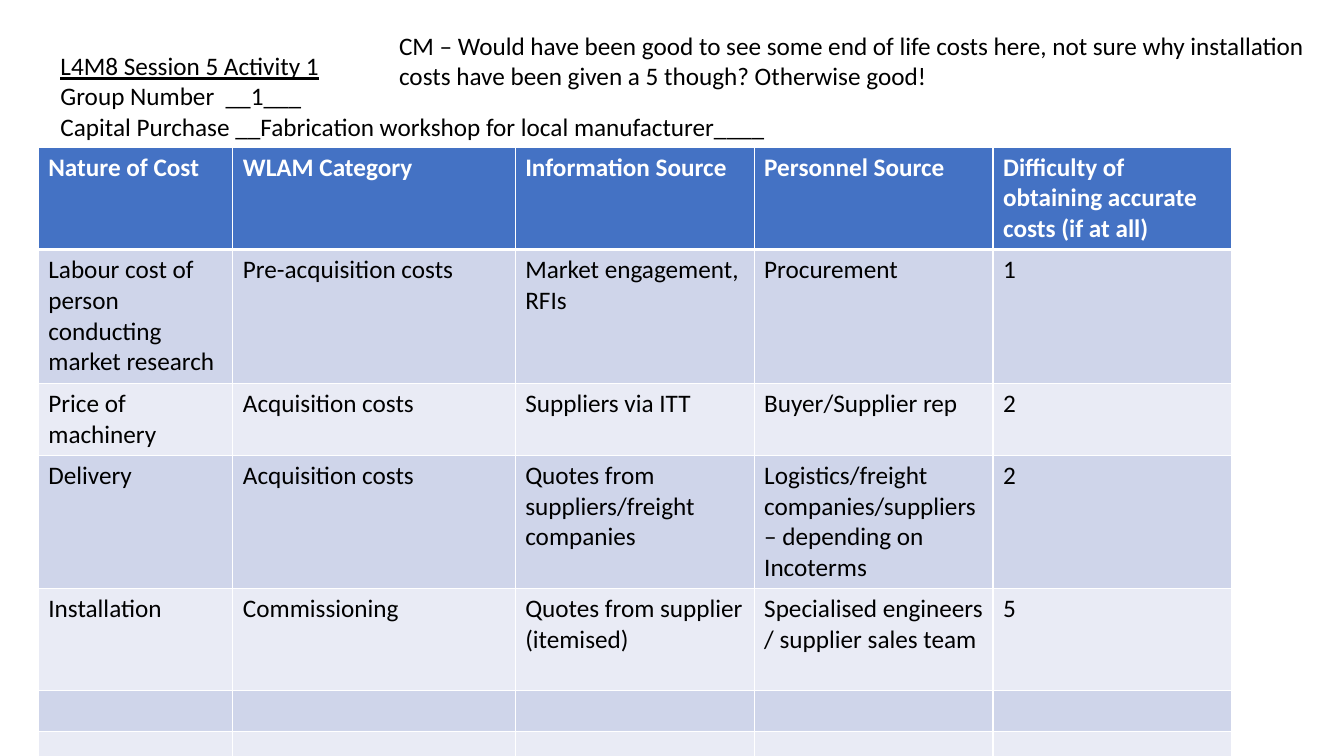
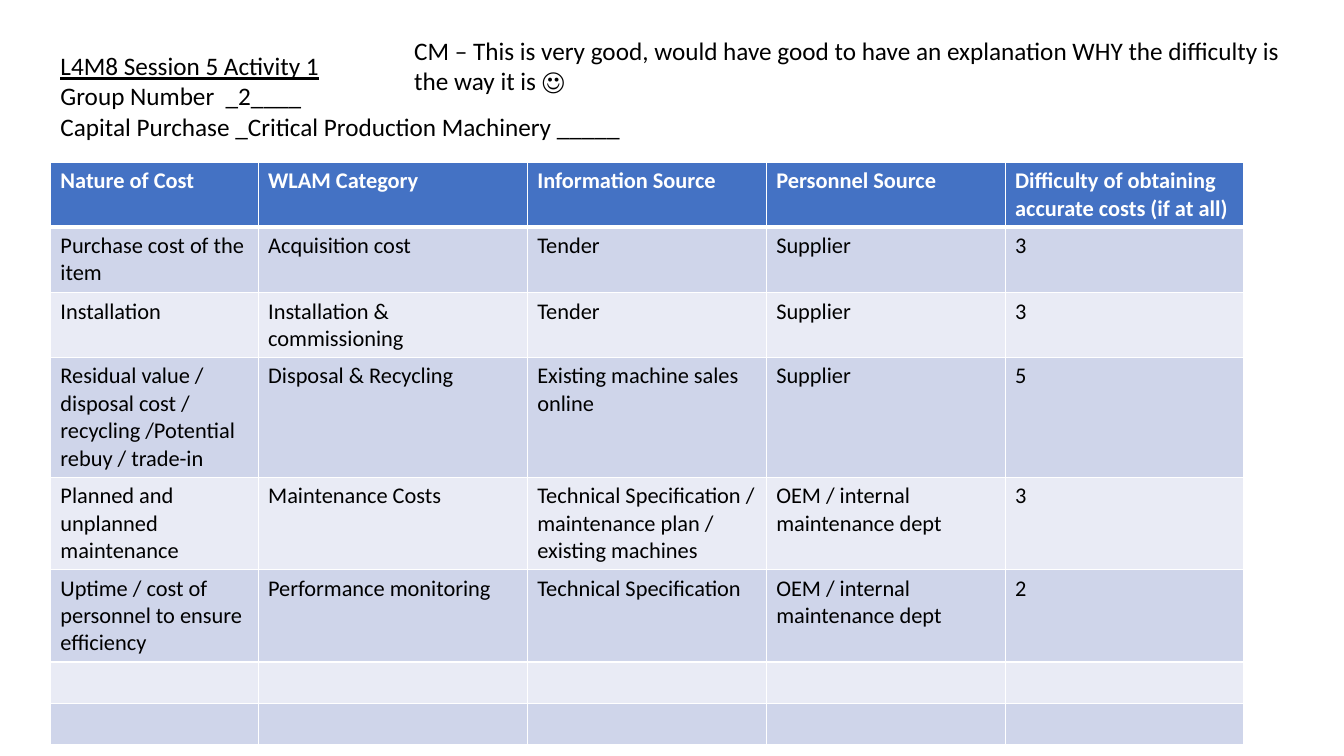
from lxml import etree
from pptx import Presentation
from pptx.dml.color import RGBColor
from pptx.enum.text import MSO_ANCHOR, MSO_AUTO_SIZE, PP_ALIGN
from pptx.oxml.ns import qn
from pptx.util import Pt

TOP, LEFT, NO_AUTOSIZE = MSO_ANCHOR.TOP, PP_ALIGN.LEFT, MSO_AUTO_SIZE.NONE

PX = 9144  # 100 px to the inch
SLIDE_W, SLIDE_H = 1333, 750
FONT = "Calibri"
TEXT_SIZE = 18
COLORS = {
    "text": "000000",
    "header": "4472C4",
    "header_text": "FFFFFF",
    "border": "FFFFFF",
    "band_dark": "CFD5EA",
    "band_light": "E9EBF5",
}
THIN, THICK = 1, 3  # border widths in points

# Content
ACTIVITY = "L4M8 Session 5 Activity 1"
HEADINGS = (
    "Nature of Cost", "WLAM Category", "Information Source",
    "Personnel Source", "Difficulty of obtaining accurate costs (if at all)",
)
GROUPS = [
    {
        "details": ["Group Number  __1___",
                    "Capital Purchase __Fabrication workshop for local manufacturer____"],
        "feedback": ["CM – Would have been good to see some end of life costs here, "
                     "not sure why installation",
                     "costs have been given a 5 though? Otherwise good!"],
        "feedback_box": (386, 25, 940, 71),
        "table_at": (38, 146),
        "table_size": 18,
        "columns": (193, 280, 237, 237, 237),
        "rows": (99, 133, 71, 132, 101, 41, 41, 41),
        "costs": [
            ("Labour cost of person conducting market research", "Pre-acquisition costs",
             "Market engagement, RFIs", "Procurement", "1"),
            ("Price of machinery", "Acquisition costs", "Suppliers via ITT",
             "Buyer/Supplier rep", "2"),
            ("Delivery", "Acquisition costs", "Quotes from suppliers/freight companies",
             "Logistics/freight companies/suppliers – depending on Incoterms", "2"),
            ("Installation", "Commissioning", "Quotes from supplier (itemised)",
             "Specialised engineers / supplier sales team", "5"),
        ],
    },
    {
        "details": ["Group Number  _2____",
                    "Capital Purchase _Critical Production Machinery _____"],
        "feedback": ["CM – This is very good, would have good to have an explanation "
                     "WHY the difficulty is the way it is ☺"],
        "feedback_box": (401, 30, 911, 71),
        "table_at": (50, 161),
        "table_size": 16,
        "columns": (206, 267, 237, 237, 237),
        "rows": (64, 65, 64, 119, 91, 91, 41, 41),
        "costs": [
            ("Purchase cost of the item", "Acquisition cost", "Tender", "Supplier", "3"),
            ("Installation", "Installation & commissioning", "Tender", "Supplier", "3"),
            ("Residual value / disposal cost / recycling /Potential rebuy / trade-in",
             "Disposal & Recycling", "Existing machine sales online", "Supplier", "5"),
            ("Planned and unplanned maintenance", "Maintenance Costs",
             "Technical Specification / maintenance plan / existing machines",
             "OEM / internal maintenance dept", "3"),
            ("Uptime / cost of personnel to ensure efficiency", "Performance monitoring",
             "Technical Specification", "OEM / internal maintenance dept", "2"),
        ],
    },
]
HEADING_BOX = (50, 45, 740, 101)


def emu(*lengths):
    return [length * PX for length in lengths]


def style(paragraph, size, color="text", bold=False):
    paragraph.alignment = LEFT
    font = paragraph.font
    font.name, font.size, font.bold = FONT, Pt(size), bold
    font.color.rgb = RGBColor.from_string(COLORS[color])


def write_lines(frame, lines):
    frame.word_wrap = True
    frame.auto_size = NO_AUTOSIZE
    frame.vertical_anchor = TOP
    frame.text = "\n".join(lines)
    for paragraph in frame.paragraphs:
        style(paragraph, TEXT_SIZE)


def add_heading(slide, details):
    heading = slide.shapes.title
    heading.left, heading.top, heading.width, heading.height = emu(*HEADING_BOX)
    write_lines(heading.text_frame, [ACTIVITY, *details])
    heading.text_frame.paragraphs[0].font.underline = True


def set_borders(cell, top, bottom):
    properties = cell._tc.get_or_add_tcPr()
    for side, width in (("L", THIN), ("R", THIN), ("T", top), ("B", bottom)):
        line = etree.SubElement(properties, qn(f"a:ln{side}"), w=str(Pt(width)))
        fill = etree.SubElement(line, qn("a:solidFill"))
        etree.SubElement(fill, qn("a:srgbClr"), val=COLORS["border"])


def add_cost_table(slide, group):
    columns, rows = group["columns"], group["rows"]
    table = slide.shapes.add_table(
        len(rows), len(columns),
        *emu(*group["table_at"], sum(columns), sum(rows))).table
    for column, width in zip(table.columns, columns):
        column.width = width * PX
    for row, height in zip(table.rows, rows):
        row.height = height * PX

    # Rows after the last cost stay empty
    texts = [HEADINGS, *group["costs"]]
    for r, row in enumerate(table.rows):
        is_header = r == 0
        band = "header" if is_header else "band_dark" if r % 2 else "band_light"
        for c, cell in enumerate(row.cells):
            set_borders(cell, THICK if r == 1 else THIN, THICK if is_header else THIN)
            cell.fill.solid()
            cell.fill.fore_color.rgb = RGBColor.from_string(COLORS[band])
            if r < len(texts):
                cell.text = texts[r][c]
                style(cell.text_frame.paragraphs[0], group["table_size"],
                      "header_text" if is_header else "text", is_header)


def main():
    deck = Presentation()
    deck.slide_width, deck.slide_height = emu(SLIDE_W, SLIDE_H)
    title_only = deck.slide_layouts.get_by_name("Title Only")
    for group in GROUPS:
        slide = deck.slides.add_slide(title_only)
        add_cost_table(slide, group)
        add_heading(slide, group["details"])
        feedback = slide.shapes.add_textbox(*emu(*group["feedback_box"]))
        write_lines(feedback.text_frame, group["feedback"])
    deck.save("out.pptx")


if __name__ == "__main__":
    main()
